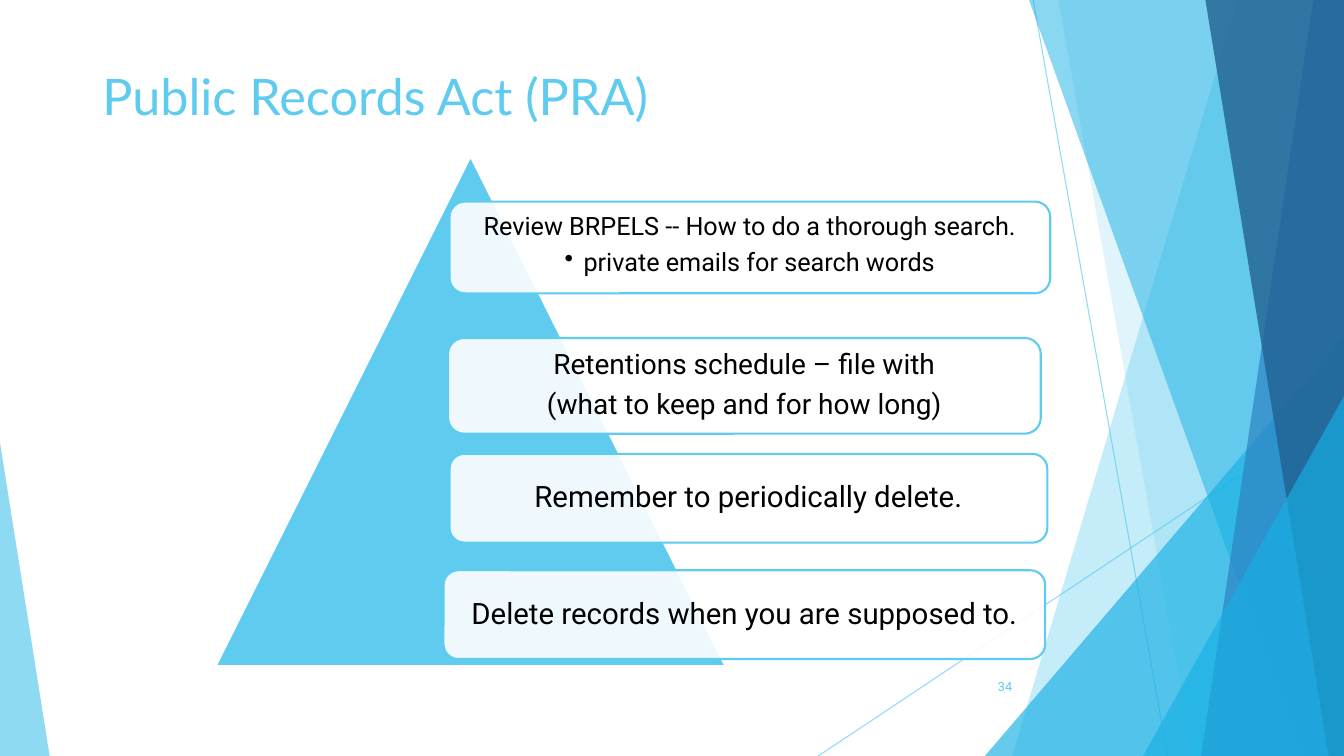
"""Build the Public Records Act slide with its pyramid list."""
from pptx import Presentation
from pptx.dml.color import RGBColor
from pptx.enum import shapes, text
from pptx.oxml import ns, xmlchemy
from pptx.util import Pt

SKY = RGBColor(0x5F, 0xCB, 0xEF)
CYAN = RGBColor(0x17, 0xB0, 0xE4)
BLUE = RGBColor(0x2E, 0x83, 0xC3)
NAVY = RGBColor(0x22, 0x62, 0x92)
WHITE = RGBColor(0xFF, 0xFF, 0xFF)
BLACK = RGBColor(0, 0, 0)
WIDTH, HEIGHT = 960, 540


def paint(shape, color, opacity=100, outline=None):
    """Give a shape its fill, opacity and outline."""
    shape.shadow.inherit = False
    shape.fill.solid()
    shape.fill.fore_color.rgb = color
    if opacity < 100:
        fill_color = shape.element.spPr.find(ns.qn("a:solidFill"))[0]
        xmlchemy.OxmlElement("a:alpha")
        fill_color.append(fill_color.makeelement(ns.qn("a:alpha"), {"val": str(opacity * 1000)}))
    if outline is None:
        shape.line.fill.background()
    else:
        shape.line.color.rgb = outline
        shape.line.width = Pt(1.5)


def write_text(shape, *lines, size, color, font="Roboto", inset=(7.2, 3.6), spacing=1.0, after=0,
               align=text.PP_ALIGN.LEFT, anchor=text.MSO_ANCHOR.MIDDLE):
    """Write one paragraph per line; a leading bullet makes a list item."""
    frame = shape.text_frame
    frame.word_wrap = True
    frame.vertical_anchor = anchor
    frame.margin_left = frame.margin_right = Pt(inset[0])
    frame.margin_top = frame.margin_bottom = Pt(inset[1])
    for index, line in enumerate(lines):
        paragraph = frame.paragraphs[0] if index == 0 else frame.add_paragraph()
        paragraph.alignment = align
        paragraph.line_spacing = spacing
        paragraph.space_after = Pt(after)
        if line.startswith("•"):
            paragraph.level = 1
            properties = paragraph._p.get_or_add_pPr()
            properties.set("marL", str(Pt(13.5)))
            properties.set("indent", str(-Pt(13.5)))
            bullet = xmlchemy.OxmlElement("a:buChar")
            bullet.set("char", "•")
            properties.append(bullet)
        run = paragraph.add_run()
        run.text = line.lstrip("•")
        run.font.size = Pt(size)
        run.font.name = font
        run.font.color.rgb = color


presentation = Presentation()
presentation.slide_width, presentation.slide_height = Pt(WIDTH), Pt(HEIGHT)
slide = presentation.slides.add_slide(presentation.slide_layouts[6])

for ends in [(738, 0, 834, HEIGHT), (WIDTH, 290, 584.5, HEIGHT)]:
    ray = slide.shapes.add_connector(shapes.MSO_CONNECTOR.STRAIGHT, *map(Pt, ends))
    ray.line.color.rgb = SKY
    ray.line.width = Pt(0.75)
    line_color = next(ray.element.spPr.iter(ns.qn("a:srgbClr")))
    line_color.append(line_color.makeelement(ns.qn("a:alpha"), {"val": "70000"}))
    ray.element.spPr.append(xmlchemy.OxmlElement("a:effectLst"))

bands_and_wedges = [
    ("band", (884, 723), SKY, 36),
    ("band", (756, 852), SKY, 20),
    ("wedge", (703.5, 240, 1), CYAN, 66),
    ("band", (735, 929.5), CYAN, 50),
    ("band", (938, 858), BLUE, 70),
    ("band", (861, 949), NAVY, 80),
    ("wedge", (816.5, 283, 1), CYAN, 66),
    ("wedge", (35.5, 316, 0), SKY, 70),
]
for kind, place, color, opacity in bands_and_wedges:
    if kind == "band":
        top_x, bottom_x = place
        builder = slide.shapes.build_freeform(Pt(top_x), 0)
        corners = [(WIDTH, 0), (WIDTH, HEIGHT), (bottom_x, HEIGHT)]
        builder.add_line_segments([(Pt(x), Pt(y)) for x, y in corners])
        facet = builder.convert_to_shape()
    else:
        inner_x, top, apex = place
        left, width = (inner_x, WIDTH - inner_x) if apex else (0, inner_x)
        facet = slide.shapes.add_shape(shapes.MSO_SHAPE.ISOSCELES_TRIANGLE, Pt(left), Pt(top),
                                       Pt(width), Pt(HEIGHT - top))
        facet.adjustments[0] = apex
    paint(facet, color, opacity)

title = slide.shapes.add_textbox(Pt(66), Pt(39.6), Pt(828), Pt(104.4))
write_text(title, "Public Records Act (PRA)", size=36, color=SKY, font="Lato", spacing=1.07,
           anchor=text.MSO_ANCHOR.TOP)

pyramid = slide.shapes.add_shape(shapes.MSO_SHAPE.ISOSCELES_TRIANGLE, Pt(154), Pt(111.6),
                                 Pt(364.3), Pt(364.3))
paint(pyramid, SKY, outline=WHITE)

cards = [
    (321.1, 144, 429.1, 65.5, 18, 5.4, text.MSO_ANCHOR.TOP,
     ["Review BRPELS -- How to do a thorough search.", "•private emails for search words"]),
    (320, 241.4, 423.4, 68.4, 20, 6, text.MSO_ANCHOR.MIDDLE,
     ["Retentions schedule – file with", "(what to keep and for how long)"]),
    (321.1, 324.2, 427, 63.4, 21, 6.3, text.MSO_ANCHOR.MIDDLE,
     ["Remember to periodically delete."]),
    (316.8, 407.3, 429.8, 63.4, 21, 6.3, text.MSO_ANCHOR.MIDDLE,
     ["Delete records when you are supposed to."]),
]
for left, top, width, height, size, inset, anchor, lines in cards:
    card = slide.shapes.add_shape(shapes.MSO_SHAPE.ROUNDED_RECTANGLE, Pt(left), Pt(top),
                                  Pt(width), Pt(height))
    paint(card, WHITE, 90, SKY)
    write_text(card, *lines, size=size, color=BLACK, inset=(inset, inset), spacing=0.9,
               after=round(size * 0.35, 1), align=text.PP_ALIGN.CENTER, anchor=anchor)

page_number = slide.shapes.add_textbox(Pt(676), Pt(476), Pt(54), Pt(28.8))
write_text(page_number, "34", size=9, color=SKY, align=text.PP_ALIGN.RIGHT)

presentation.save("out.pptx")
